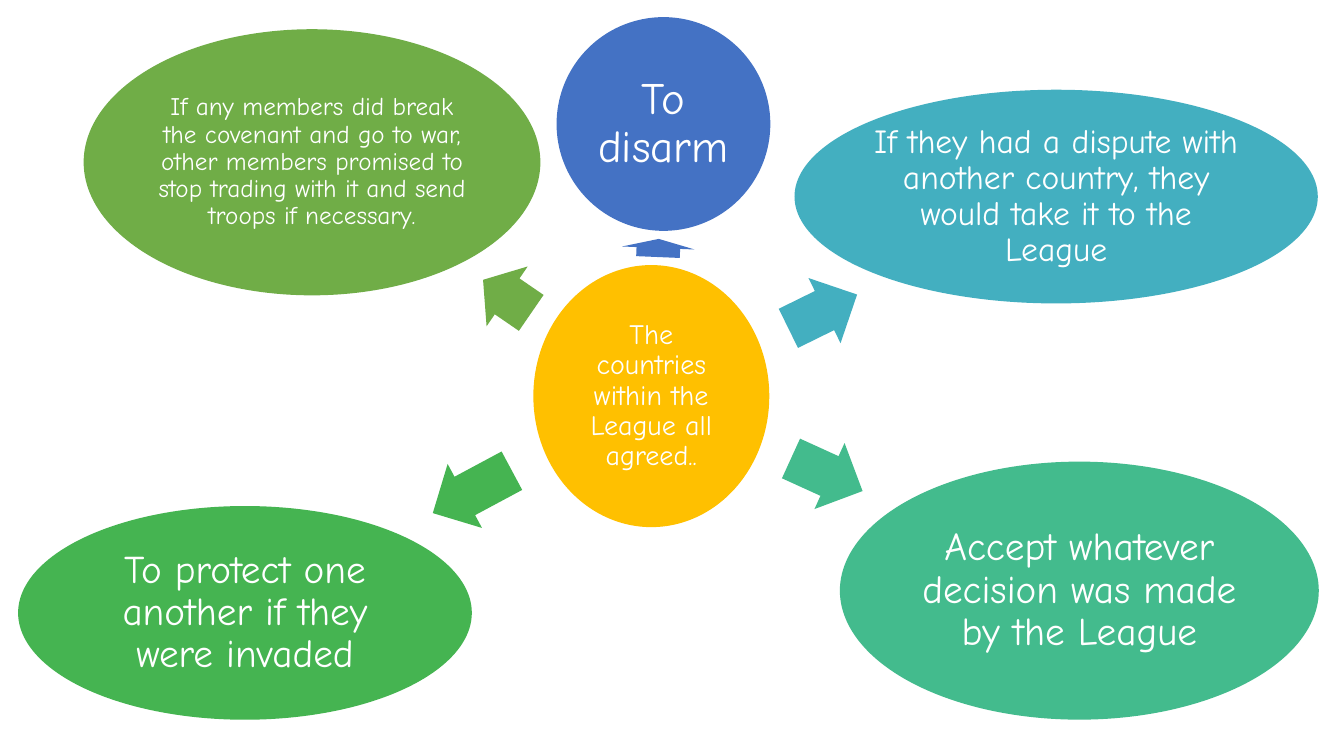
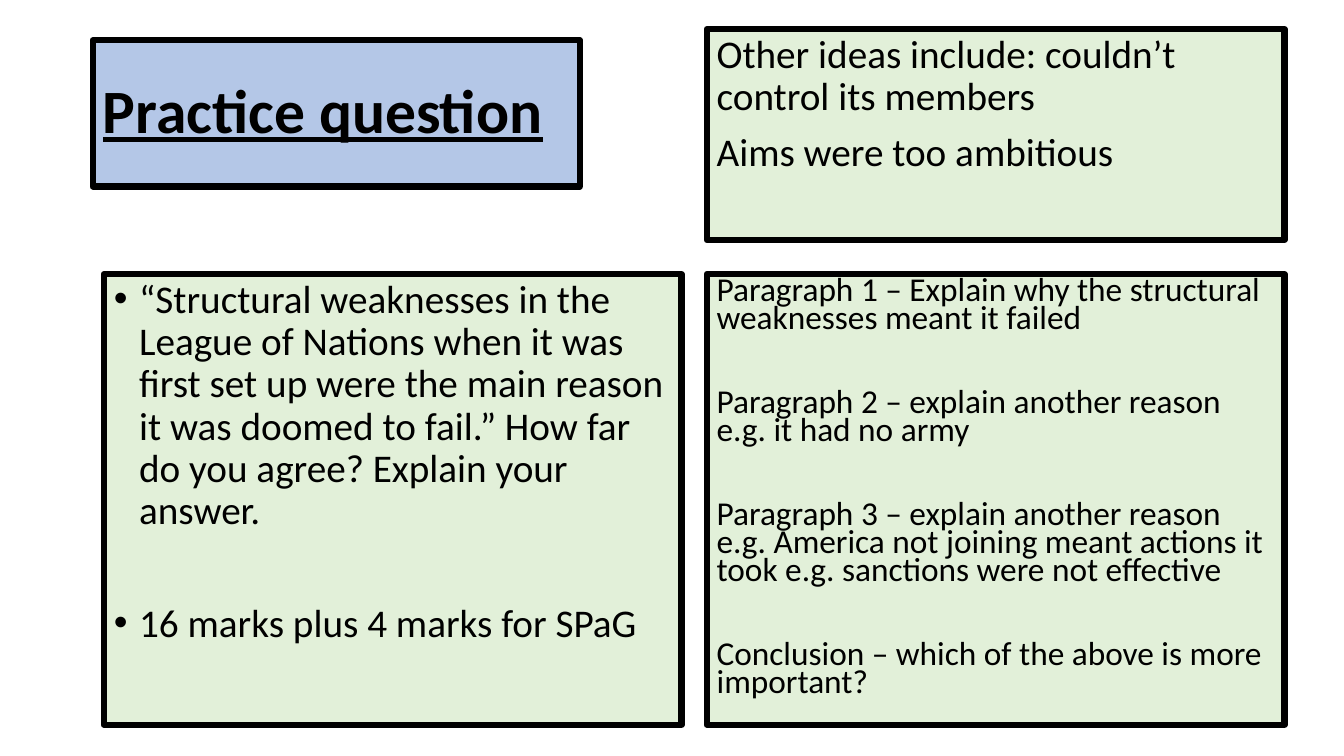
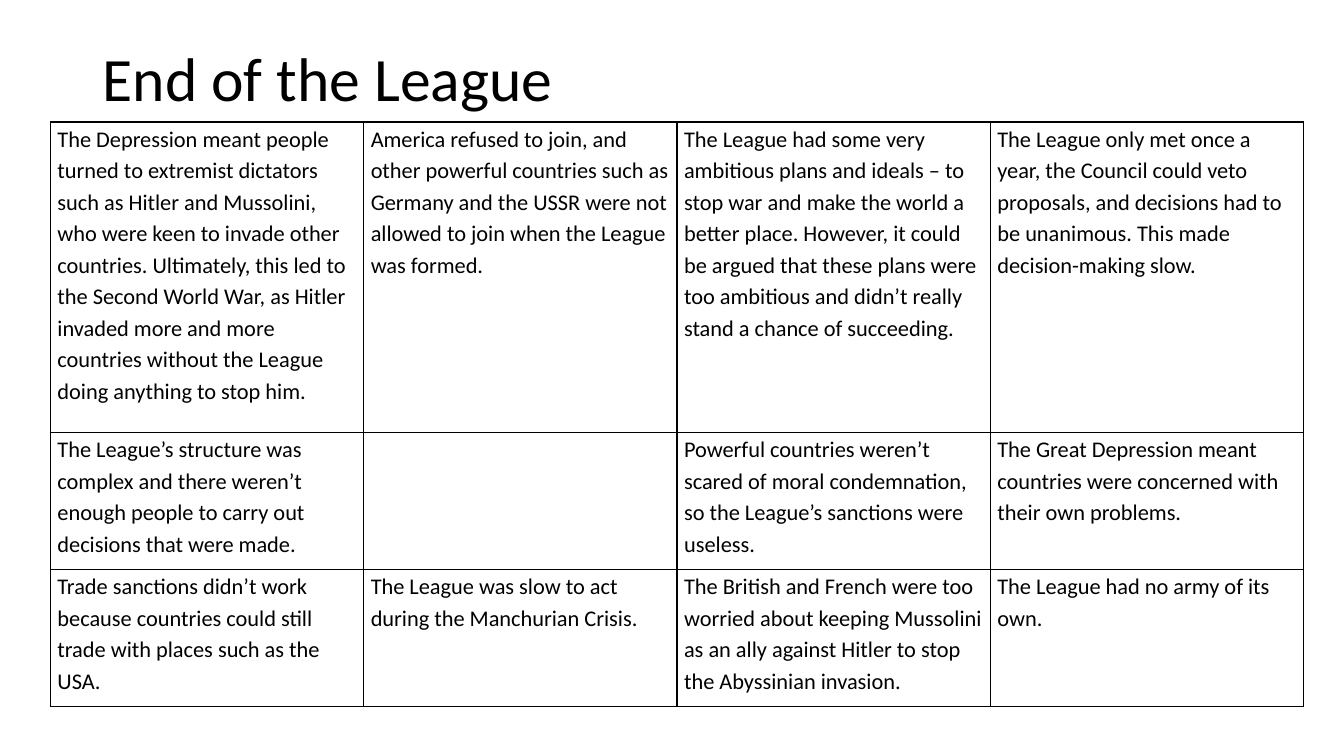
"""Three revision slides on the League of Nations."""
from lxml.etree import SubElement
from pptx import Presentation
from pptx.dml.color import RGBColor
from pptx.enum.shapes import MSO_SHAPE
from pptx.enum.text import MSO_ANCHOR, MSO_AUTO_SIZE, PP_ALIGN
from pptx.oxml.ns import qn
from pptx.util import Inches, Pt

BLACK = RGBColor(0, 0, 0)
WHITE = RGBColor(255, 255, 255)
GOLD = RGBColor(0xFF, 0xC0, 0x00)
BLUE = RGBColor(0x44, 0x72, 0xC4)
TEAL = RGBColor(0x43, 0xAF, 0xC0)
MINT = RGBColor(0x43, 0xBB, 0x8D)
GREEN = RGBColor(0x45, 0xB4, 0x51)
OLIVE = RGBColor(0x70, 0xAD, 0x47)
PALE_BLUE = RGBColor(0xB4, 0xC7, 0xE7)
PALE_GREEN = RGBColor(0xE2, 0xF0, 0xD9)
BODY_FONT, DIAGRAM_FONT = "Calibri", "Comic Neue"

HUB = ("The countries within the League all agreed..", 20, GOLD, (5.29, 2.63, 2.34, 2.6))
ARROW_H = 0.72
PROMISES = [
    (("To disarm", 32, BLUE, (5.52, 0.17, 2.12, 2.12)), (6.44, 2.1, 0.18), 272.4),
    (("If they had a dispute with another country, they would take it to the League",
      24, TEAL, (7.88, 0.89, 5.19, 2.12)), (7.78, 2.73, 0.76), 333.8),
    (("Accept whatever decision was made by the League",
      28, MINT, (8.33, 4.58, 4.75, 2.56)), (7.81, 4.35, 0.78), 24.5),
    (("To protect one another if they were invaded",
      28, GREEN, (0.18, 5.02, 4.5, 2.12)), (4.24, 4.52, 0.89), 151.8),
    (("If any members did break the covenant and go to war, other members promised "
      "to stop trading with it and send troops if necessary.",
      18, OLIVE, (0.83, 0.29, 4.53, 2.64)), (4.74, 2.58, 0.58), 214.5),
]

QUESTION = [
    "“Structural weaknesses in the League of Nations when it was first set up were the main "
    "reason it was doomed to fail.” How far do you agree? Explain your answer.",
    "16 marks plus 4 marks for SPaG",
]
PLAN = [
    "Paragraph 1 – Explain why the structural weaknesses meant it failed",
    "Paragraph 2 – explain another reason e.g. it had no army",
    "Paragraph 3 – explain another reason e.g. America not joining meant actions it took "
    "e.g. sanctions were not effective",
    "Conclusion – which of the above is more important?",
]
IDEAS = ["Other ideas include: couldn’t control its members", "Aims were too ambitious"]
PANEL_W, PANEL_H, PANEL_TOP = 5.73, 4.47, 2.72
LEFT_COL, RIGHT_COL = 1.03, 7.01

REASONS = [
    ["The Depression meant people turned to extremist dictators such as Hitler and Mussolini, "
     "who were keen to invade other countries. Ultimately, this led to the Second World War, "
     "as Hitler invaded more and more countries without the League doing anything to stop him.",
     "America refused to join, and other powerful countries such as Germany and the USSR were "
     "not allowed to join when the League was formed.",
     "The League had some very ambitious plans and ideals – to stop war and make the world a "
     "better place. However, it could be argued that these plans were too ambitious and didn’t "
     "really stand a chance of succeeding.",
     "The League only met once a year, the Council could veto proposals, and decisions had to "
     "be unanimous. This made decision-making slow."],
    ["The League’s structure was complex and there weren’t enough people to carry out decisions "
     "that were made.",
     "",
     "Powerful countries weren’t scared of moral condemnation, so the League’s sanctions were "
     "useless.",
     "The Great Depression meant countries were concerned with their own problems."],
    ["Trade sanctions didn’t work because countries could still trade with places such as the "
     "USA.",
     "The League was slow to act during the Manchurian Crisis.",
     "The British and French were too worried about keeping Mussolini as an ally against Hitler "
     "to stop the Abyssinian invasion.",
     "The League had no army of its own."],
]
ROW_HEIGHTS = [3.08, 1.36, 1.36]


def place(s, box):
    s.left, s.top, s.width, s.height = map(Inches, box)


def write(tf, lines, size, color=BLACK, font=BODY_FONT, spacing=0.9, before=0, gap=0):
    tf.word_wrap = True
    tf.text = "\n".join(lines)
    for i, p in enumerate(tf.paragraphs):
        p.line_spacing = spacing
        p.space_before = Pt(gap if i else before)
        for r in p.runs:
            r.font.size, r.font.name, r.font.color.rgb = Pt(size), font, color


def add_solid(slide, kind, box, color):
    s = slide.shapes.add_shape(kind, *map(Inches, box))
    s.shadow.inherit = False
    s.fill.solid()
    s.fill.fore_color.rgb = color
    s.line.fill.background()
    return s


def add_bubble(slide, text, size, color, box):
    tf = add_solid(slide, MSO_SHAPE.OVAL, box, color).text_frame
    tf.margin_left = tf.margin_right = tf.margin_top = tf.margin_bottom = Inches(0.03)
    tf.vertical_anchor = MSO_ANCHOR.MIDDLE
    write(tf, [text], size, WHITE, DIAGRAM_FONT)
    tf.paragraphs[0].alignment = PP_ALIGN.CENTER


def add_arrow(slide, color, box, angle):
    s = add_solid(slide, MSO_SHAPE.RIGHT_ARROW, (*box, ARROW_H), color)
    s.adjustments[0], s.adjustments[1] = 0.6, 0.5
    s.rotation = angle


def set_title(slide, text, box):
    s = slide.shapes.title
    place(s, box)
    tf = s.text_frame
    write(tf, [text], 44)
    tf.auto_size = MSO_AUTO_SIZE.NONE
    tf.vertical_anchor = MSO_ANCHOR.MIDDLE
    tf.paragraphs[0].alignment = PP_ALIGN.LEFT
    return s


def frame(s, color):
    s.fill.solid()
    s.fill.fore_color.rgb = color
    s.line.color.rgb = BLACK
    s.line.width = Pt(4.5)


def fill_panel(s, box, lines, size, **spacing):
    place(s, box)
    frame(s, PALE_GREEN)
    write(s.text_frame, lines, size, before=10, **spacing)
    s.text_frame.auto_size = MSO_AUTO_SIZE.NONE


def add_panel(slide, box, lines, size, **spacing):
    fill_panel(slide.shapes.add_textbox(0, 0, 0, 0), box, lines, size, **spacing)


def set_borders(cell):
    tcPr = cell._tc.get_or_add_tcPr()
    for side in ("lnL", "lnR", "lnT", "lnB"):
        ln = SubElement(tcPr, qn(f"a:{side}"), w=str(Pt(1)))
        SubElement(SubElement(ln, qn("a:solidFill")), qn("a:srgbClr"), val=str(BLACK))


def build_promises(prs):
    slide = prs.slides.add_slide(prs.slide_layouts[6])
    add_bubble(slide, *HUB)
    for bubble, arrow, angle in PROMISES:
        add_arrow(slide, bubble[2], arrow, angle)
        add_bubble(slide, *bubble)


def build_question(prs):
    slide = prs.slides.add_slide(prs.slide_layouts[1])
    title = set_title(slide, "Practice question", (0.92, 0.4, 4.83, 1.45))
    frame(title, PALE_BLUE)
    font = title.text_frame.paragraphs[0].runs[0].font
    font.bold = font.underline = True
    body = slide.placeholders[1]
    fill_panel(body, (LEFT_COL, PANEL_TOP, PANEL_W, PANEL_H), QUESTION, 28, gap=50)
    for p in body.text_frame.paragraphs:
        pPr = p._p.get_or_add_pPr()
        pPr.set("marL", str(Inches(0.25)))
        pPr.set("indent", str(-Inches(0.25)))
    add_panel(slide, (RIGHT_COL, PANEL_TOP, PANEL_W, PANEL_H), PLAN, 23.8, spacing=0.7, gap=40)
    add_panel(slide, (RIGHT_COL, 0.29, PANEL_W, 2.09), IDEAS, 28, gap=10)


def build_reasons(prs):
    slide = prs.slides.add_slide(prs.slide_layouts[5])
    set_title(slide, "End of the League", (0.92, 0.4, 11.5, 0.81))
    box = (0.5, 1.21, 12.43, sum(ROW_HEIGHTS))
    table = slide.shapes.add_table(len(REASONS), len(REASONS[0]), *map(Inches, box)).table
    table.first_row = table.horz_banding = False
    for row, height, texts in zip(table.rows, ROW_HEIGHTS, REASONS):
        row.height = Inches(height)
        for cell, text in zip(row.cells, texts):
            set_borders(cell)
            cell.fill.background()
            cell.margin_left = cell.margin_right = Inches(0.07)
            cell.margin_top = cell.margin_bottom = 0
            write(cell.text_frame, [text], 16, spacing=1.15)


def main():
    prs = Presentation()
    prs.slide_width, prs.slide_height = Inches(13.33), Inches(7.5)
    build_promises(prs)
    build_question(prs)
    build_reasons(prs)
    prs.save("out.pptx")


if __name__ == "__main__":
    main()
